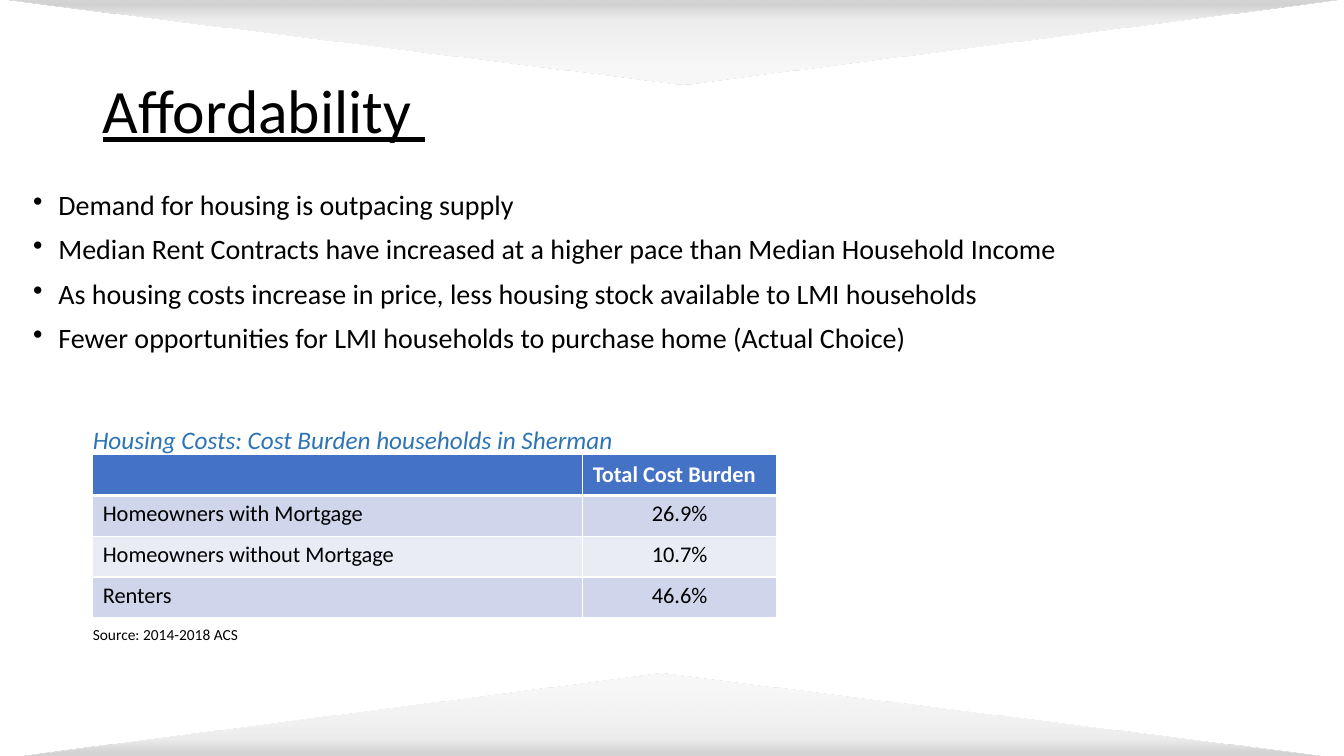
from dataclasses import dataclass

from lxml import etree
from pptx import Presentation
from pptx import util as u
from pptx.dml.color import RGBColor
from pptx.enum import shapes, text
from pptx.oxml import ns


@dataclass(frozen=True)
class Theme:
    font: str = "Calibri"
    ink: str = "000000"
    white: str = "FFFFFF"
    caption: str = "2E74B5"
    header: str = "4472C4"
    bands: tuple = ("CFD5EA", "E9EBF5")
    # position %, colour, opacity %
    fade: tuple = ((0, "BFBFBF", 63), (7, "C9C9C9", 83), (24, "D9D9D9", 48),
                   (53, "DBDBDB", 33), (81, "F2F2F2", 51))
    title_size: int = 44
    body_size: int = 20
    caption_size: int = 18
    table_size: int = 16
    source_size: int = 11


def add_element(parent, tag, **attributes):
    child = etree.SubElement(parent, ns.qn(tag))
    for name, value in attributes.items():
        child.set(name, str(value))
    return child


class SlideBuilder:
    def __init__(self, page, theme):
        self.page = page
        self.theme = theme

    def style(self, para, size, color=None, bold=False):
        font = para.font
        font.name = self.theme.font
        font.size = u.Pt(size)
        font.bold = bold
        font.color.rgb = RGBColor.from_string(color or self.theme.ink)
        return font

    def fading_triangle(self, top, rotation=0):
        shape = self.page.shapes.add_shape(
            shapes.MSO_SHAPE.ISOSCELES_TRIANGLE,
            u.Inches(0), u.Inches(top), u.Inches(13.33), u.Inches(0.84))
        shape.adjustments[0] = 0.492
        shape.rotation = rotation
        shape.shadow.inherit = False
        shape.line.fill.background()
        shape.fill.gradient()
        gradient = shape.fill._fill._gradFill
        for child in list(gradient):
            gradient.remove(child)
        stops = add_element(gradient, "a:gsLst")
        for position, color, opacity in self.theme.fade:
            stop = add_element(stops, "a:gs", pos=position * 1000)
            tint = add_element(stop, "a:srgbClr", val=color)
            add_element(tint, "a:alpha", val=opacity * 1000)
        add_element(gradient, "a:lin", ang=270 * 60000, scaled=0)

    def text_box(self, left, top, width, height, lines, size, color=None,
                 anchor=text.MSO_ANCHOR.MIDDLE, flush=False):
        """Add a text box; flush removes the side insets."""
        box = self.page.shapes.add_textbox(
            u.Inches(left), u.Inches(top), u.Inches(width), u.Inches(height))
        frame = box.text_frame
        frame.word_wrap = True
        frame.vertical_anchor = anchor
        if flush:
            frame.margin_left = frame.margin_right = frame.margin_bottom = 0
            frame.margin_top = u.Inches(0.03)
        frame.text = "\n".join(lines)
        for para in frame.paragraphs:
            self.style(para, size, color)
        return frame

    def title(self, wording):
        frame = self.text_box(0.92, 0.4, 11.5, 1.45, [wording],
                              self.theme.title_size)
        para = frame.paragraphs[0]
        para.line_spacing = 0.9
        para.font.underline = True

    def bullets(self, lines):
        frame = self.text_box(0.23, 1.85, 10.42, 4.76, lines,
                              self.theme.body_size,
                              anchor=text.MSO_ANCHOR.TOP)
        indent = u.Inches(0.25)
        for index, para in enumerate(frame.paragraphs):
            para.line_spacing = 0.9
            para.space_before = u.Pt(10 if index else 0)
            properties = para._p.get_or_add_pPr()
            properties.set("marL", str(indent))
            properties.set("indent", str(-indent))
            bullet = properties.makeelement(ns.qn("a:buChar"), {"char": "•"})
            properties.find(ns.qn("a:defRPr")).addprevious(bullet)

    def cell_borders(self, cell, widths):
        properties = cell._tc.get_or_add_tcPr()
        for side, width in widths.items():
            line = add_element(properties, f"a:ln{side}", w=u.Pt(width))
            fill = add_element(line, "a:solidFill")
            add_element(fill, "a:srgbClr", val=self.theme.white)

    def table(self, left, top, widths, row_height, rows):
        table = self.page.shapes.add_table(
            len(rows), len(widths), u.Inches(left), u.Inches(top),
            u.Inches(sum(widths)), u.Inches(row_height * len(rows))).table
        for column, width in zip(table.columns, widths):
            column.width = u.Inches(width)
        for r, row in enumerate(rows):
            for c, wording in enumerate(row):
                self.table_cell(table.cell(r, c), r, c, wording)

    def table_cell(self, cell, r, c, wording):
        theme = self.theme
        is_header = r == 0
        self.cell_borders(cell, {"L": 1, "R": 1, "T": 3 if r == 1 else 1,
                                 "B": 3 if is_header else 1})
        cell.fill.solid()
        color = theme.header if is_header else theme.bands[(r - 1) % 2]
        cell.fill.fore_color.rgb = RGBColor.from_string(color)
        cell.text = wording
        para = cell.text_frame.paragraphs[0]
        self.style(para, theme.table_size,
                   theme.white if is_header else theme.ink, is_header)
        if is_header:
            cell.vertical_anchor = text.MSO_ANCHOR.MIDDLE
        elif c:
            para.alignment = text.PP_ALIGN.CENTER


def main():
    deck = Presentation()
    deck.slide_width, deck.slide_height = u.Inches(13.33), u.Inches(7.5)
    theme = Theme()
    slide = SlideBuilder(deck.slides.add_slide(deck.slide_layouts[6]), theme)

    slide.fading_triangle(0, rotation=180)
    slide.fading_triangle(6.68)
    slide.title("Affordability ")
    slide.bullets([
        "Demand for housing is outpacing supply",
        "Median Rent Contracts have increased at a higher pace than Median Household Income",
        "As housing costs increase in price, less housing stock available to LMI households",
        "Fewer opportunities for LMI households to purchase home (Actual Choice)",
    ])
    slide.text_box(0.92, 6.17, 4.38, 0.21, ["Source: 2014-2018 ACS"],
                   theme.source_size, flush=True)
    slide.table(0.92, 4.51, (4.86, 1.92), 0.405, [
        ("", "Total Cost Burden"),
        ("Homeowners with Mortgage", "26.9%"),
        ("Homeowners without Mortgage", "10.7%"),
        ("Renters", "46.6%"),
    ])
    caption = slide.text_box(
        0.92, 4.18, 5.99, 0.33,
        ["Housing Costs: Cost Burden households in Sherman"],
        theme.caption_size, theme.caption, flush=True)
    caption.paragraphs[0].font.italic = True
    deck.save("out.pptx")


if __name__ == "__main__":
    main()
